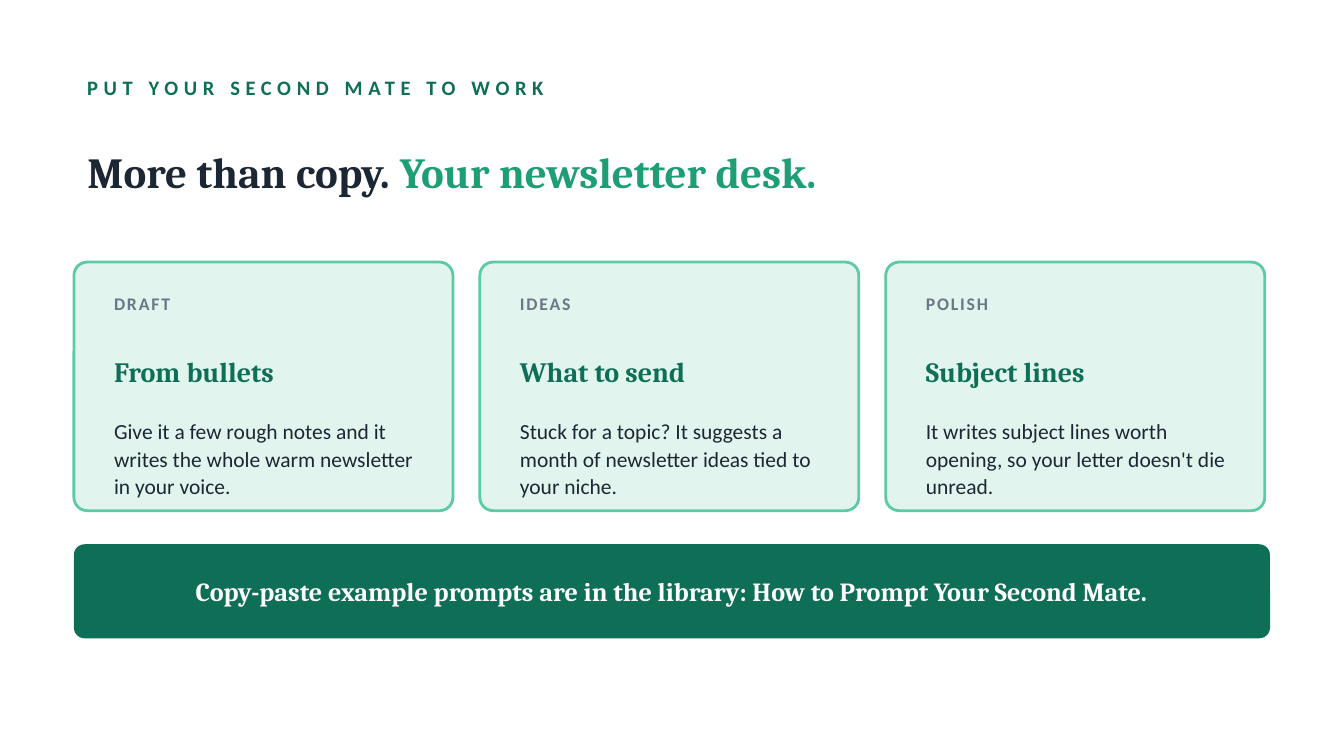
from collections import namedtuple

from pptx import Presentation
from pptx.dml.color import RGBColor
from pptx.enum.shapes import MSO_SHAPE as Shape
from pptx.enum.text import MSO_ANCHOR as Anchor, MSO_AUTO_SIZE as AutoSize, PP_ALIGN as Align
from pptx.util import Inches, Pt

WHITE = RGBColor(0xFF, 0xFF, 0xFF)
INK = RGBColor(0x1C, 0x27, 0x33)
GREY = RGBColor(0x6B, 0x77, 0x85)
DEEP_GREEN = RGBColor(0x0F, 0x6E, 0x56)
GREEN = RGBColor(0x1D, 0x9E, 0x75)
LIGHT_GREEN = RGBColor(0x5D, 0xCA, 0xA5)
PALE_GREEN = RGBColor(0xE1, 0xF5, 0xEE)

GRID = 0.05
MARGIN, CONTENT_WIDTH = 11, 178
CARD_WIDTH, CARD_GAP = 56.4, 4
CARD_RADIUS, BANNER_RADIUS = 2, 1.6

EYEBROW = {"name": "Calibri", "size": Pt(11), "bold": True, "color": DEEP_GREEN, "spacing": 3}
TITLE = {"name": "Cambria", "size": Pt(23), "bold": True, "color": INK}
TITLE_ACCENT = {**TITLE, "color": GREEN}
CARD_LABEL = {"name": "Calibri", "size": Pt(9.5), "bold": True, "color": GREY, "spacing": 1}
CARD_HEADING = {"name": "Cambria", "size": Pt(15), "bold": True, "color": DEEP_GREEN}
CARD_BODY = {"name": "Calibri", "size": Pt(11.5), "bold": False, "color": INK}
BANNER = {"name": "Cambria", "size": Pt(14), "bold": True, "color": WHITE}

CARDS = [
    ("DRAFT", "From bullets",
     "Give it a few rough notes and it writes the whole warm newsletter in your voice."),
    ("IDEAS", "What to send",
     "Stuck for a topic? It suggests a month of newsletter ideas tied to your niche."),
    ("POLISH", "Subject lines",
     "It writes subject lines worth opening, so your letter doesn't die unread."),
]

Box = namedtuple("Box", "left top width height")


def inside(box, left, top, width, height):
    return Box(box.left + left, box.top + top, width, height)


def to_lengths(box):
    return [Inches(cells * GRID) for cells in box]


def format_run(run, style):
    for attribute, value in style.items():
        if attribute == "color":
            run.font.color.rgb = value
        elif attribute == "spacing":
            run.font._element.set("spc", str(value * 100))
        else:
            setattr(run.font, attribute, value)


def write(shape, runs, align=Align.LEFT, line_spacing=1.0):
    frame = shape.text_frame
    frame.word_wrap = True
    frame.auto_size = AutoSize.NONE
    frame.vertical_anchor = Anchor.MIDDLE
    paragraph = frame.paragraphs[0]
    paragraph.alignment = align
    paragraph.line_spacing = line_spacing
    for text, style in runs:
        run = paragraph.add_run()
        run.text = text
        format_run(run, style)


def add_text(slide, box, text, style, **layout):
    write(slide.shapes.add_textbox(*to_lengths(box)), [(text, style)], **layout)


def add_panel(slide, box, radius, fill, line=None):
    shape = slide.shapes.add_shape(Shape.ROUNDED_RECTANGLE, *to_lengths(box))
    shape.shadow.inherit = False
    shape.adjustments[0] = radius / min(box.width, box.height)
    shape.fill.solid()
    shape.fill.fore_color.rgb = fill
    if line is None:
        shape.line.fill.background()
    else:
        shape.line.color.rgb = line
        shape.line.width = Pt(1.5)


def add_header(slide, box):
    add_text(slide, inside(box, 0, 0, box.width, 6), "PUT YOUR SECOND MATE TO WORK", EYEBROW)
    title = slide.shapes.title
    title.left, title.top, title.width, title.height = to_lengths(inside(box, 0, 7, box.width, 17))
    write(title, [("More than copy. ", TITLE), ("Your newsletter desk.", TITLE_ACCENT)])


def add_card(slide, box, label, heading, body):
    add_panel(slide, box, CARD_RADIUS, PALE_GREEN, LIGHT_GREEN)
    add_text(slide, inside(box, 4, 3.2, 49, 6), label, CARD_LABEL)
    add_text(slide, inside(box, 4, 9.3, 49, 14), heading, CARD_HEADING)
    add_text(slide, inside(box, 4, 23.6, 49, 11), body, CARD_BODY, line_spacing=1.08)


def add_banner(slide, box):
    add_panel(slide, box, BANNER_RADIUS, DEEP_GREEN)
    add_text(slide, inside(box, 5, 0, box.width - 10, box.height),
             "Copy-paste example prompts are in the library: How to Prompt Your Second Mate.",
             BANNER, align=Align.CENTER)


def main():
    presentation = Presentation()
    presentation.slide_width = Inches(10)
    presentation.slide_height = presentation.slide_width * 9 // 16
    slide = presentation.slides.add_slide(presentation.slide_layouts.get_by_name("Title Only"))
    slide.background.fill.solid()
    slide.background.fill.fore_color.rgb = WHITE

    add_header(slide, Box(MARGIN, 10, CONTENT_WIDTH, 24))
    for column, card in enumerate(CARDS):
        left = MARGIN + column * (CARD_WIDTH + CARD_GAP)
        add_card(slide, Box(left, 39, CARD_WIDTH, 37), *card)
    add_banner(slide, Box(MARGIN, 81, CONTENT_WIDTH, 14))
    presentation.save("out.pptx")


if __name__ == "__main__":
    main()
